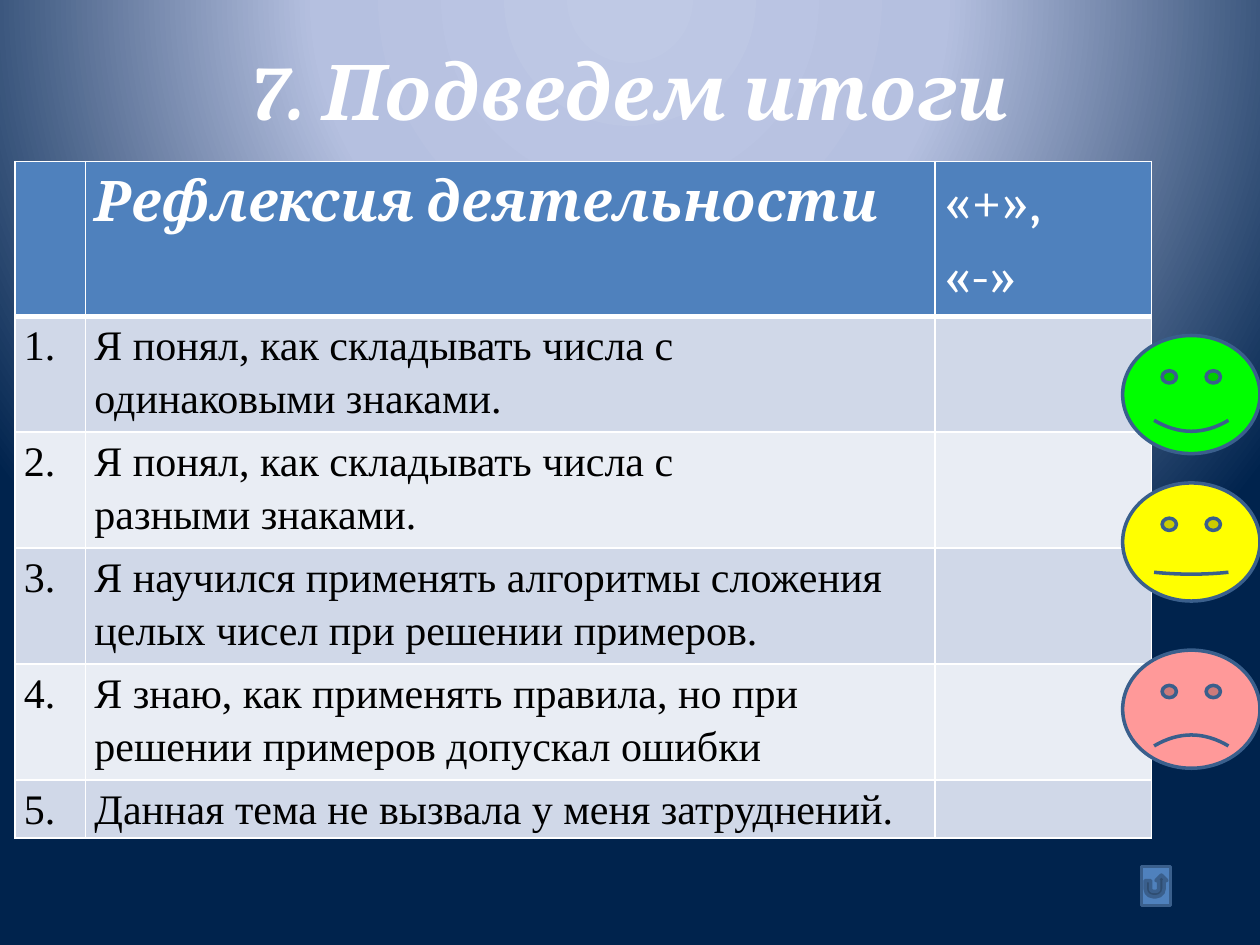
"""Build the lesson summary slide with its self-assessment table."""
from pptx import Presentation
from pptx.dml.color import RGBColor
from pptx.enum.shapes import MSO_SHAPE as Shape
from pptx.enum.text import MSO_ANCHOR as Anchor, PP_ALIGN as Align
from pptx.oxml import parse_xml
from pptx.oxml.ns import nsdecls, qn
from pptx.util import Inches, Pt

WIDTH, HEIGHT = 10, 7.5
COLORS = {
    "white": "FFFFFF", "black": "000000", "blue": "4F81BD", "outline": "3A5F8C",
    "odd": "D0D8E8", "even": "E9EDF4",
    "green": "00FF00", "yellow": "FFFF00", "red": "FF9999",
    "glow": "BFC9E5", "haze": "B5C0E0", "night": "00234D",
}
GRADIENT = {0: "glow", 40: "haze", 100: "night"}
HEADING = {"name": "Cambria", "size": Pt(32), "bold": True, "italic": True}
TITLE = {**HEADING, "size": Pt(44)}
MARKS = {**HEADING, "bold": False, "italic": False}
BODY = {"name": "Times New Roman", "size": Pt(24), "bold": False}
COLUMN_WIDTHS = [0.56, 6.74, 1.72]
ROW_HEIGHTS = [1.23, 0.92, 0.92, 0.92, 0.92, 0.46]
STATEMENTS = [
    ["Я понял, как складывать числа с", "одинаковыми знаками."],
    ["Я понял, как складывать числа с", "разными знаками."],
    ["Я научился применять алгоритмы сложения целых чисел при решении примеров."],
    ["Я знаю, как применять правила, но при решении примеров допускал ошибки"],
    ["Данная тема не вызвала у меня затруднений."],
]
FACES = [(0.355, "green", 0.047), (0.511, "yellow", 0.008), (0.688, "red", -0.047)]


def rgb(name):
    """Return the named colour."""
    return RGBColor.from_string(COLORS[name])


def place(left, top, width, height):
    """Turn shares of the slide's size into lengths."""
    return [Inches(share * side) for share, side in
            zip((left, top, width, height), (WIDTH, HEIGHT) * 2)]


def apply_format(target, values):
    """Set each attribute of the target from a dict."""
    for name, value in values.items():
        setattr(target, name, value)


def write(frame, lines, font, color, **layout):
    """Fill a text frame with one formatted paragraph per line."""
    for index, line in enumerate(lines):
        paragraph = frame.paragraphs[0] if index == 0 else frame.add_paragraph()
        apply_format(paragraph, layout)
        run = paragraph.add_run()
        run.text = line
        apply_format(run.font, font)
        run.font.color.rgb = rgb(color)


def paint_background(slide):
    """Give the slide a round gradient centred above its top edge."""
    slide.background.fill.gradient()
    stops = "".join(f'<a:gs pos="{position * 1000}"><a:srgbClr val="{COLORS[name]}"/></a:gs>'
                    for position, name in GRADIENT.items())
    gradient = slide.element.find(".//" + qn("a:gradFill"))
    gradient.getparent().replace(gradient, parse_xml(
        f'<a:gradFill {nsdecls("a")} rotWithShape="1"><a:gsLst>{stops}</a:gsLst>'
        '<a:path path="circle"><a:fillToRect l="50000" t="-80000" r="50000" b="180000"/>'
        '</a:path></a:gradFill>'))


def add_title(slide, text):
    """Add the centred slide title."""
    frame = slide.shapes.add_textbox(*place(0.05, 0.04, 0.9, 0.167)).text_frame
    apply_format(frame, {"word_wrap": True, "vertical_anchor": Anchor.TOP})
    write(frame, [text], TITLE, "white", alignment=Align.CENTER)


def add_borders(cell, widths):
    """Draw white borders of the given point widths around a cell."""
    properties = cell._tc.get_or_add_tcPr()
    for index, (side, width) in enumerate(widths.items()):
        properties.insert(index, parse_xml(
            f'<a:ln{side} {nsdecls("a")} w="{Pt(width)}"><a:solidFill>'
            f'<a:srgbClr val="{COLORS["white"]}"/></a:solidFill></a:ln{side}>'))


def format_cell(cell, row, lines, font):
    """Fill, border and write one table cell."""
    is_header = row == 0
    fill = "blue" if is_header else "odd" if row % 2 else "even"
    apply_format(cell, {"margin_left": Inches(0.07), "margin_right": Inches(0.07),
                        "margin_top": 0, "margin_bottom": 0})
    cell.fill.solid()
    cell.fill.fore_color.rgb = rgb(fill)
    add_borders(cell, {"L": 1, "R": 1, "T": 3 if row == 1 else 1, "B": 3 if is_header else 1})
    write(cell.text_frame, lines, font, "white" if is_header else "black", line_spacing=1.15)


def add_reflection_table(slide):
    """Add the table of numbered statements."""
    table = slide.shapes.add_table(
        len(ROW_HEIGHTS), len(COLUMN_WIDTHS), Inches(0.12), Inches(1.28),
        Inches(sum(COLUMN_WIDTHS)), Inches(sum(ROW_HEIGHTS))).table
    for column, width in zip(table.columns, COLUMN_WIDTHS):
        column.width = Inches(width)
    for row, height in zip(table.rows, ROW_HEIGHTS):
        row.height = Inches(height)
    header = [([], HEADING), (["Рефлексия деятельности"], HEADING), (["«+»,", "«-»"], MARKS)]
    body = [[([f"{number}."], BODY), (lines, BODY), ([], BODY)]
            for number, lines in enumerate(STATEMENTS, 1)]
    for row, contents in enumerate([header, *body]):
        for column, (lines, font) in enumerate(contents):
            format_cell(table.cell(row, column), row, lines, font)


def add_figure(slide, kind, box, fill):
    """Add a filled preset shape with the common outline."""
    shape = slide.shapes.add_shape(kind, *place(*box))
    shape.shadow.inherit = False
    shape.fill.solid()
    shape.fill.fore_color.rgb = rgb(fill)
    shape.line.color.rgb = rgb("outline")
    shape.line.width = Pt(2)
    return shape


def main():
    """Build and save the presentation."""
    presentation = Presentation()
    apply_format(presentation, {"slide_width": Inches(WIDTH), "slide_height": Inches(HEIGHT)})
    slide = presentation.slides.add_slide(presentation.slide_layouts[6])
    paint_background(slide)
    add_title(slide, "7. Подведем итоги")
    add_reflection_table(slide)
    add_figure(slide, Shape.ACTION_BUTTON_RETURN, (0.906, 0.917, 0.023, 0.041), "blue")
    for top, color, smile in FACES:
        face = add_figure(slide, Shape.SMILEY_FACE, (0.891, top, 0.109, 0.125), color)
        face.adjustments[0] = smile
    presentation.save("out.pptx")


if __name__ == "__main__":
    main()
